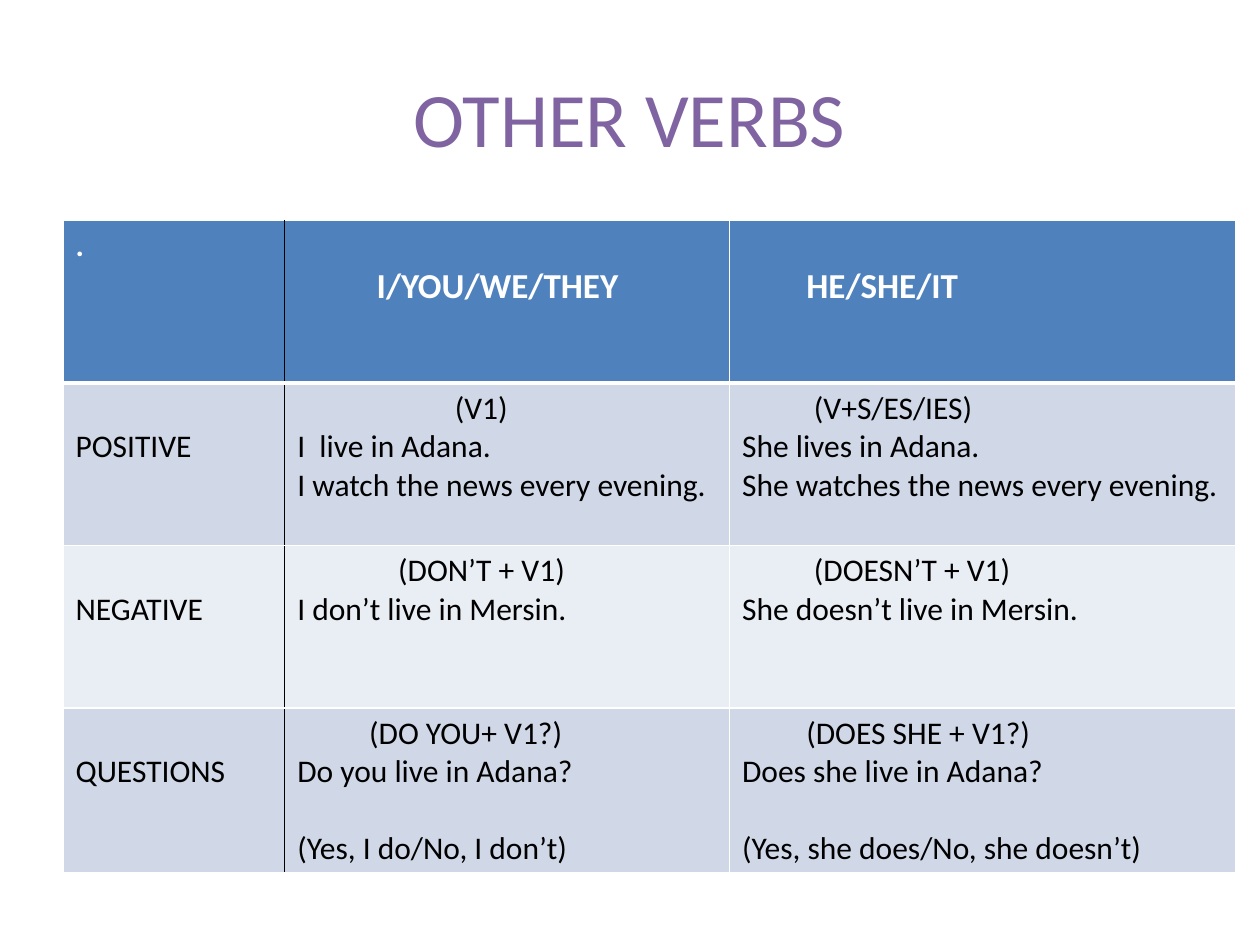
from dataclasses import dataclass

from lxml.etree import SubElement
from pptx import Presentation
from pptx.dml.color import RGBColor
from pptx.enum.text import MSO_ANCHOR, PP_ALIGN
from pptx.oxml.ns import qn
from pptx.util import Inches, Pt

FONT = "Calibri"
WHITE, BLACK, PURPLE = "FFFFFF", "000000", "8064A2"
HEADER_FILL, DARK_BAND, LIGHT_BAND = "4F81BD", "D0D8E8", "E9EDF4"
LINE_POINTS = 22  # height of one line of 18 point text
COLUMN_WIDTHS = (1.76, 3.53, 4.02)
ROW_HEIGHT = 1.29


@dataclass
class Line:
    text: str
    indent: float = 0
    size: int = 18
    space_before: int = 0


@dataclass
class Entry:
    lines: list[Line]
    lowered: bool = False


@dataclass
class Row:
    entries: list[Entry]
    fill: str
    color: str = BLACK
    bold: bool = False


def label(text: str) -> Entry:
    return Entry([Line(text)], lowered=True)


def heading(text: str, indent: float) -> Entry:
    return Entry([Line(text, indent, 20)], lowered=True)


def examples(form: str, indent: float, *sentences: str, answer: str = "") -> Entry:
    lines = [Line(form, indent), *map(Line, sentences)]
    if answer:
        lines.append(Line(answer, space_before=LINE_POINTS))
    return Entry(lines)


ROWS = [
    Row([Entry([Line(".")]), heading("I/YOU/WE/THEY", 0.63), heading("HE/SHE/IT", 0.51)],
        HEADER_FILL, WHITE, True),
    Row([label("POSITIVE"),
         examples("(V1)", 1.25, "I  live in Adana.", "I watch the news every evening."),
         examples("(V+S/ES/IES)", 0.57, "She lives in Adana.",
                  "She watches the news every evening.")], DARK_BAND),
    Row([label("NEGATIVE"),
         examples("(DON’T + V1)", 0.8, "I don’t live in Mersin."),
         examples("(DOESN’T + V1)", 0.57, "She doesn’t live in Mersin.")], LIGHT_BAND),
    Row([label("QUESTIONS"),
         examples("(DO YOU+ V1?)", 0.57, "Do you live in Adana?",
                  answer="(Yes, I do/No, I don’t)"),
         examples("(DOES SHE + V1?)", 0.51, "Does she live in Adana?",
                  answer="(Yes, she does/No, she doesn’t)")], DARK_BAND),
]


def rgb(color: str) -> RGBColor:
    return RGBColor.from_string(color)


def add_span(para, text: str, size: int, color: str, bold: bool = False) -> None:
    span = para.add_run()
    span.text = text
    span.font.name = FONT
    span.font.size = Pt(size)
    span.font.bold = bold
    span.font.color.rgb = rgb(color)


def add_border(cell, side: str, color: str, points: int) -> None:
    """Draw one side (L, R, T or B); call before the cell is filled."""
    properties = cell._tc.get_or_add_tcPr()
    border = SubElement(properties, qn(f"a:ln{side}"), w=str(Pt(points)))
    SubElement(SubElement(border, qn("a:solidFill")), qn("a:srgbClr"), val=color)


def fill_cell(cell, entry: Entry, row: Row, row_index: int, column_index: int) -> None:
    add_border(cell, "L", BLACK if column_index == 1 else WHITE, 1)
    add_border(cell, "R", BLACK if column_index == 0 else WHITE, 1)
    add_border(cell, "T", WHITE, 3 if row_index == 1 else 1)
    add_border(cell, "B", WHITE, 3 if row_index == 0 else 1)
    cell.fill.solid()
    cell.fill.fore_color.rgb = rgb(row.fill)
    cell.margin_top = Inches(0.05) + (Pt(LINE_POINTS) if entry.lowered else 0)
    frame = cell.text_frame
    for index, line in enumerate(entry.lines):
        para = frame.add_paragraph() if index else frame.paragraphs[0]
        if line.indent:
            para._p.get_or_add_pPr().set("marL", str(Inches(line.indent)))
        if line.space_before:
            para.space_before = Pt(line.space_before)
        add_span(para, line.text, line.size, row.color, row.bold)


def add_title(page) -> None:
    box = page.shapes.add_textbox(Inches(0.5), Inches(0.3), Inches(9), Inches(1.25))
    frame = box.text_frame
    frame.word_wrap = True
    frame.vertical_anchor = MSO_ANCHOR.MIDDLE
    para = frame.paragraphs[0]
    para.alignment = PP_ALIGN.CENTER
    add_span(para, "OTHER VERBS", 44, PURPLE)


def add_verb_table(page) -> None:
    table = page.shapes.add_table(
        len(ROWS), len(COLUMN_WIDTHS), Inches(0.5), Inches(1.75),
        Inches(sum(COLUMN_WIDTHS)), Inches(ROW_HEIGHT * len(ROWS))).table
    for column, width in zip(table.columns, COLUMN_WIDTHS):
        column.width = Inches(width)
    for row_index, row in enumerate(ROWS):
        table.rows[row_index].height = Inches(ROW_HEIGHT)
        for column_index, entry in enumerate(row.entries):
            fill_cell(table.cell(row_index, column_index), entry, row,
                      row_index, column_index)


def main() -> None:
    deck = Presentation()
    deck.slide_width, deck.slide_height = Inches(10), Inches(7.5)
    page = deck.slides.add_slide(deck.slide_layouts[6])
    add_title(page)
    add_verb_table(page)
    deck.save("out.pptx")


if __name__ == "__main__":
    main()
